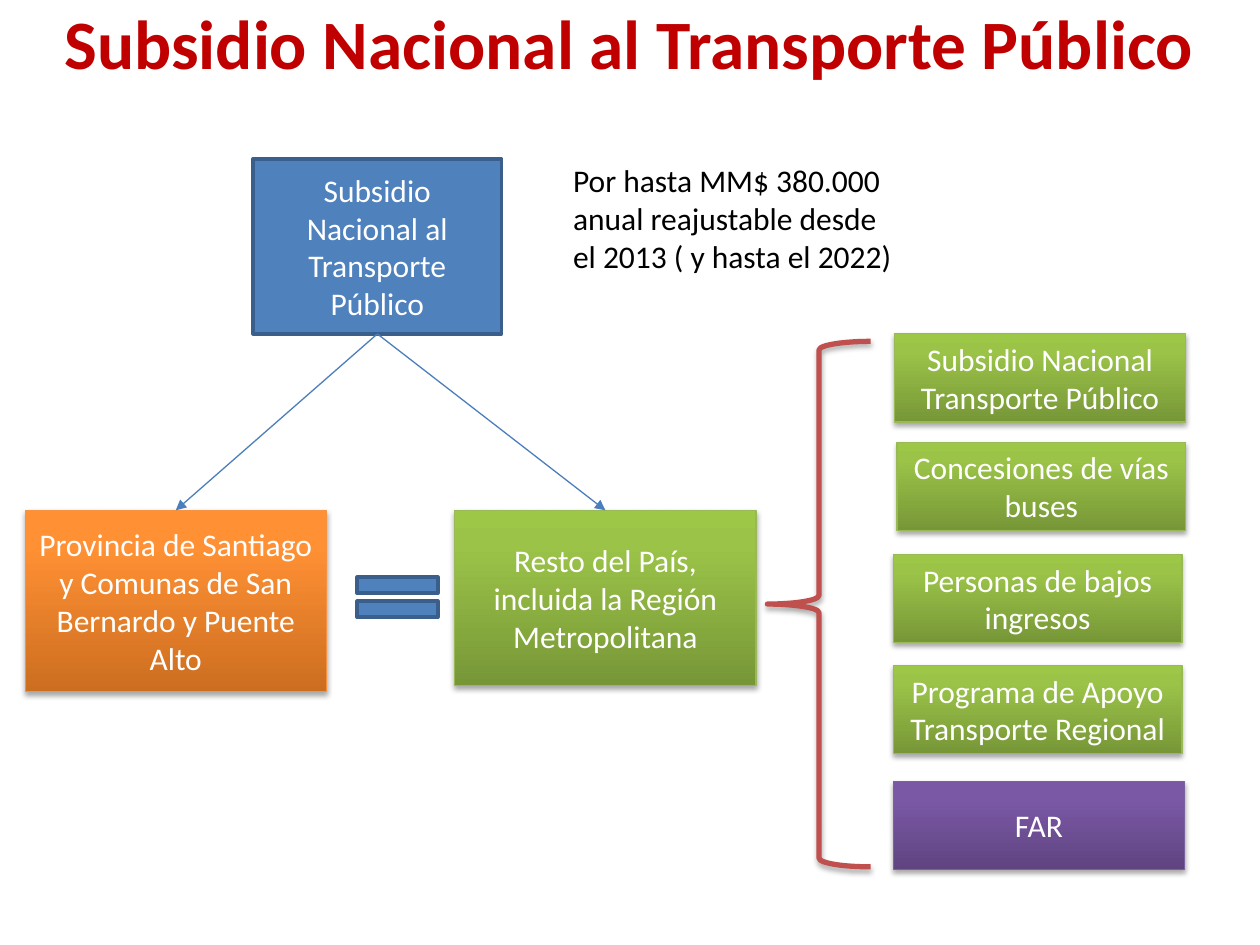
from dataclasses import dataclass
from pptx import Presentation
from pptx.dml.color import RGBColor as Rgb
from pptx.enum.shapes import MSO_CONNECTOR as Conn, MSO_SHAPE as Kind
from pptx.enum.text import MSO_ANCHOR as Anchor, PP_ALIGN as Align
from pptx.oxml import parse_xml
from pptx.oxml.ns import nsdecls
from pptx.slide import Slide
from pptx.util import Inches, Pt


@dataclass(frozen=True)
class Paint:
    fill: tuple[str, ...]
    line: str
    width: float = 0.75


@dataclass(frozen=True)
class Theme:
    font: str = "Calibri"
    head: float = 39.6
    body: float = 18
    red: str = "C00000"
    white: str = "FFFFFF"
    black: str = "000000"
    arrow: str = "4B7EBC"
    blue: Paint = Paint(("4F81BD",), "3A5F8C", 2)
    orange: Paint = Paint(("CC6E20", "FF9034", "FF9136"), "F69240")
    green: Paint = Paint(("779737", "9BC348", "9DC746"), "98B955")
    purple: Paint = Paint(("5F4480", "7B58A6", "7C57A8"), "7D60A0")
    brace: Paint = Paint((), "C0504D", 3)


@dataclass(frozen=True)
class Box:
    left: float
    top: float
    width: float
    height: float
    paint: Paint
    text: str = ""
    kind: Kind = Kind.RECTANGLE


THEME = Theme()
STOPS = (0, 80, 100)
ROOT = Box(2.01, 1.26, 1.97, 1.39, THEME.blue, "Subsidio Nacional al Transporte Público")
CITY = Box(0.2, 4.05, 2.39, 1.44, THEME.orange,
           "Provincia de Santiago y Comunas de San Bernardo y Puente Alto")
REST = Box(3.61, 4.05, 2.39, 1.39, THEME.green,
           "Resto del País, incluida la Región Metropolitana")
ITEMS = (
    Box(7.1, 2.65, 2.31, 0.7, THEME.green, "Subsidio Nacional Transporte Público"),
    Box(7.12, 3.51, 2.29, 0.7, THEME.green, "Concesiones de vías buses"),
    Box(7.09, 4.4, 2.29, 0.7, THEME.green, "Personas de bajos ingresos"),
    Box(7.09, 5.28, 2.29, 0.7, THEME.green, "Programa de Apoyo Transporte Regional"),
    Box(7.09, 6.2, 2.31, 0.7, THEME.purple, "FAR"),
)
SIGNS = (
    Box(6.09, 2.71, 0.82, 4.17, THEME.brace, kind=Kind.LEFT_BRACE),
    Box(2.72, 4.47, 0.87, 0.54, THEME.blue, kind=Kind.MATH_EQUAL),
)


def style(shape, text: str, size: float, color: str, align: Align,
          anchor: Anchor, bold: bool = False) -> None:
    frame = shape.text_frame
    frame.word_wrap = True
    frame.vertical_anchor = anchor
    frame.text = text
    for para in frame.paragraphs:
        para.alignment = align
        for run in para.runs:
            run.font.name = THEME.font
            run.font.size = Pt(size)
            run.font.bold = bold
            run.font.color.rgb = Rgb.from_string(color)


def blend(shape, hues: tuple[str, ...]) -> None:
    stops = "".join(
        f'<a:gs pos="{stop * 1000}"><a:srgbClr val="{hue}"/></a:gs>'
        for stop, hue in zip(STOPS, hues))
    shape.element.spPr.find("{*}prstGeom").addnext(parse_xml(
        f'<a:gradFill {nsdecls("a")} rotWithShape="1"><a:gsLst>{stops}</a:gsLst>'
        '<a:lin ang="16200000" scaled="0"/></a:gradFill>'))


def shade(shape) -> None:
    shape.element.spPr.find("{*}effectLst").append(parse_xml(
        f'<a:outerShdw {nsdecls("a")} blurRad="{Pt(3.1)}" dist="{Pt(1.8)}" '
        'dir="5400000" rotWithShape="0"><a:srgbClr val="000000">'
        '<a:alpha val="35000"/></a:srgbClr></a:outerShdw>'))


def draw(slide: Slide, box: Box) -> None:
    shape = slide.shapes.add_shape(
        box.kind, Inches(box.left), Inches(box.top),
        Inches(box.width), Inches(box.height))
    shape.shadow.inherit = False
    paint = box.paint
    shape.line.color.rgb = Rgb.from_string(paint.line)
    shape.line.width = Pt(paint.width)
    if len(paint.fill) > 1:
        blend(shape, paint.fill)
    elif paint.fill:
        shape.fill.solid()
        shape.fill.fore_color.rgb = Rgb.from_string(paint.fill[0])
    else:
        shape.fill.background()
    if paint != THEME.blue:
        shade(shape)
    if box.text:
        style(shape, box.text, THEME.body, THEME.white, Align.CENTER, Anchor.MIDDLE)


def link(slide: Slide, start: Box, end: Box) -> None:
    line = slide.shapes.add_connector(
        Conn.STRAIGHT,
        Inches(start.left + start.width / 2), Inches(start.top + start.height),
        Inches(end.left + end.width / 2), Inches(end.top))
    line.line.color.rgb = Rgb.from_string(THEME.arrow)
    line.line.width = Pt(0.75)
    line.line._get_or_add_ln().append(
        parse_xml(f'<a:tailEnd {nsdecls("a")} type="triangle"/>'))
    line.element.spPr.append(parse_xml(f'<a:effectLst {nsdecls("a")}/>'))


def main() -> None:
    deck = Presentation()
    deck.slide_width, deck.slide_height = Inches(10), Inches(7.5)
    slide = deck.slides.add_slide(deck.slide_layouts[6])
    title = slide.shapes.add_textbox(Inches(0.35), Inches(0.06), Inches(9.29), Inches(0.54))
    style(title, "Subsidio Nacional al Transporte Público", THEME.head,
          THEME.red, Align.CENTER, Anchor.MIDDLE, True)
    note = slide.shapes.add_textbox(Inches(4.45), Inches(1.23), Inches(2.77), Inches(1.01))
    style(note, "Por hasta MM$ 380.000 anual reajustable desde el 2013 ( y hasta el 2022)",
          THEME.body, THEME.black, Align.LEFT, Anchor.TOP)
    for box in (ROOT, CITY, REST, *ITEMS, *SIGNS):
        draw(slide, box)
    for end in (CITY, REST):
        link(slide, ROOT, end)
    deck.save("out.pptx")


if __name__ == "__main__":
    main()
